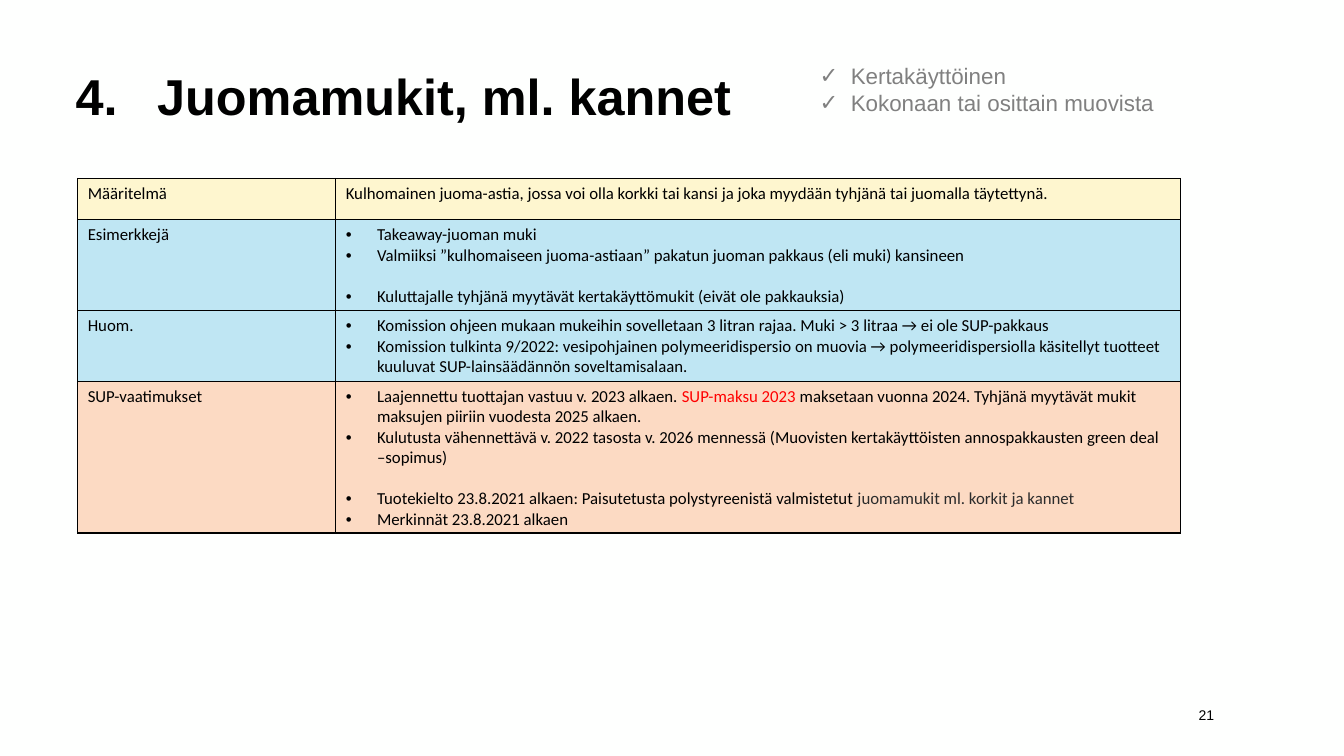
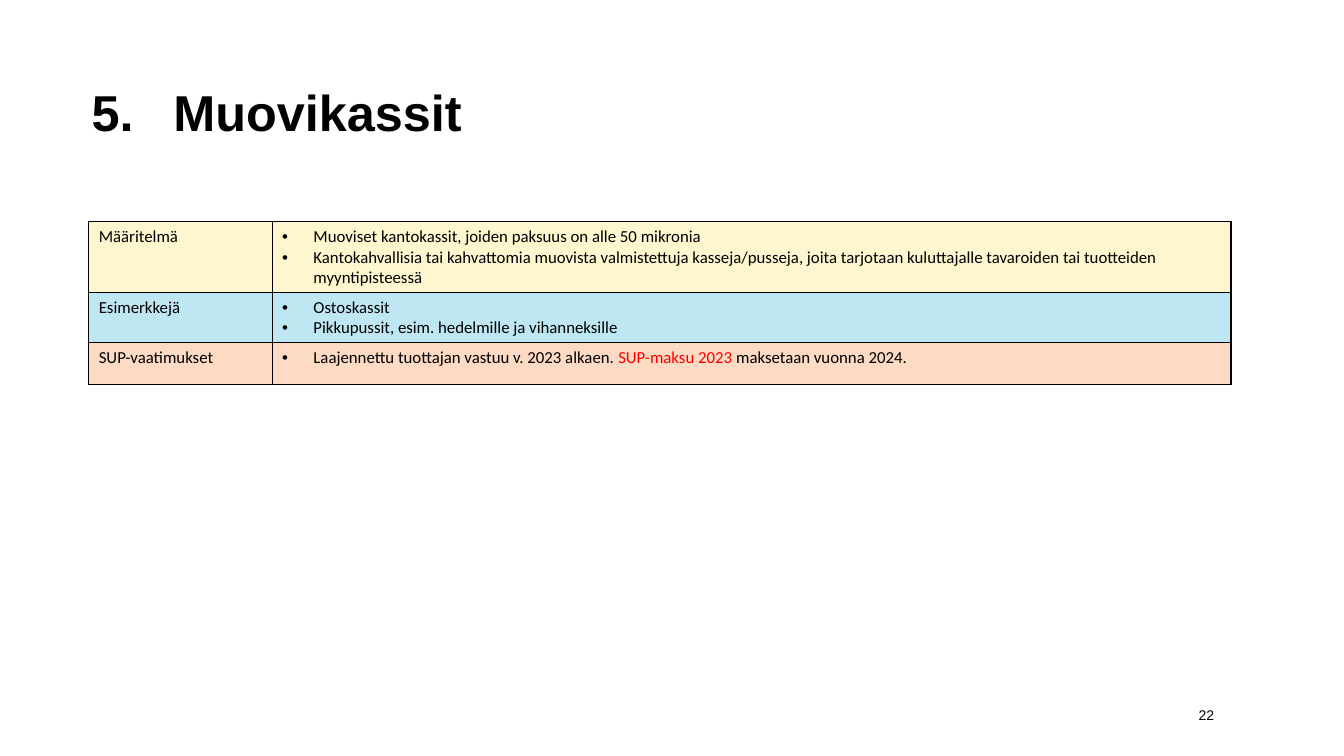
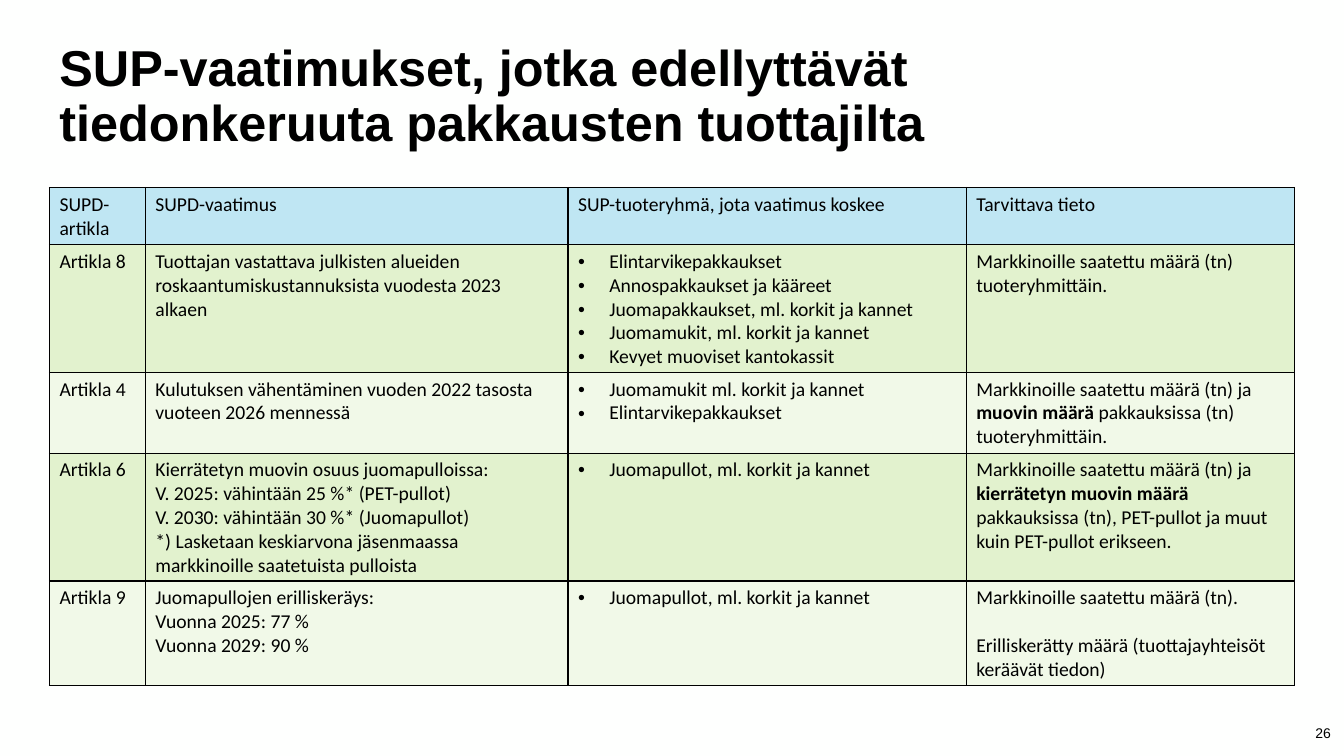
from dataclasses import dataclass

from lxml import etree
from pptx import Presentation
from pptx import util as u
from pptx.dml.color import RGBColor
from pptx.enum import text
from pptx.oxml import ns

WIDTH, HEIGHT = 13.33, 7.5
BACKGROUND, BLACK, GRAY, DARK, RED = "FEFFFE", "000000", "808080", "2C2C2C", "FF0000"
YELLOW, BLUE, ORANGE, GREEN, PALE_GREEN = "FEF6CF", "BFE6F3", "FCDAC3", "E2F2CE", "F1F9E8"
HEADING_FONT, TABLE_FONT = "Arial", "Calibri"
ROW_HEIGHT = 5.47
LINE_HEIGHT = 1.22
BULLET_INDENT, NUMBER_INDENT = 0.31, 0.81


@dataclass
class Piece:
    """Words within a paragraph that have their own colour or weight."""
    words: str
    color: str = BLACK
    bold: bool = False


@dataclass
class Item:
    """One paragraph; a gap leaves one empty line above it."""
    pieces: tuple
    bullet: str = ""
    gap: bool = False


def plain(*pieces, gap=False):
    return Item(pieces, gap=gap)


def bullet(*pieces, gap=False):
    return Item(pieces, "•", gap)


def bullets(*lines):
    return [bullet(line) for line in lines]


def across(percent):
    return u.Inches(WIDTH * percent / 100)


def down(percent):
    return u.Inches(HEIGHT * percent / 100)


def rgb(color):
    return RGBColor.from_string(color)


def add_xml(parent, tag, **attributes):
    return etree.SubElement(parent, ns.qn(tag), attributes)


def set_marker(paragraph, indent, tag, **attributes):
    """Hang the paragraph behind a bullet or an automatic number."""
    properties = paragraph._p.get_or_add_pPr()
    properties.set("marL", str(u.Inches(indent)))
    properties.set("indent", str(-u.Inches(indent)))
    add_xml(properties, "a:buFont", typeface=HEADING_FONT)
    add_xml(properties, tag, **attributes)


def format_run(run, font, size, color=BLACK, bold=False):
    run.font.name = font
    run.font.size = u.Pt(size)
    run.font.color.rgb = rgb(color)
    run.font.bold = bold


def fill_text(frame, items, font, size, color=BLACK):
    for index, item in enumerate(items):
        paragraph = frame.add_paragraph() if index else frame.paragraphs[0]
        if item.bullet:
            set_marker(paragraph, BULLET_INDENT, "a:buChar", char=item.bullet)
        if item.gap:
            paragraph.space_before = u.Pt(round(size * LINE_HEIGHT, 1))
        for piece in item.pieces:
            if isinstance(piece, str):
                piece = Piece(piece, color)
            run = paragraph.add_run()
            run.text = piece.words
            format_run(run, font, size, piece.color, piece.bold)


def add_text_box(slide, left, top, width, height, anchor=text.MSO_ANCHOR.MIDDLE):
    shape = slide.shapes.add_textbox(across(left), down(top), across(width), down(height))
    frame = shape.text_frame
    frame.word_wrap = True
    frame.vertical_anchor = anchor
    return frame


def add_title(slide, left, top, words, number=None):
    frame = add_text_box(slide, left, top, 85, 16.27)
    frame.text = words
    paragraph = frame.paragraphs[0]
    if number:
        set_marker(paragraph, NUMBER_INDENT, "a:buAutoNum",
                   type="arabicPeriod", startAt=str(number))
    paragraph.line_spacing = 0.9
    format_run(paragraph.runs[0], HEADING_FONT, 36, bold=True)


def add_page_number(slide, number, left=68.57, top=91.87):
    frame = add_text_box(slide, left, top, 22.5, 5.33)
    frame.text = str(number)
    paragraph = frame.paragraphs[0]
    paragraph.alignment = text.PP_ALIGN.RIGHT
    format_run(paragraph.runs[0], HEADING_FONT, 10)


def add_borders(cell):
    properties = cell._tc.get_or_add_tcPr()
    for side in ("a:lnL", "a:lnR", "a:lnT", "a:lnB"):
        line = add_xml(properties, side, w=str(u.Pt(1)))
        add_xml(add_xml(line, "a:solidFill"), "a:srgbClr", val=BLACK)


def add_table(slide, left, top, column_widths, rows, size):
    """Each row is a fill colour followed by its cells."""
    shape = slide.shapes.add_table(
        len(rows), len(column_widths), across(left), down(top),
        across(sum(column_widths)), down(ROW_HEIGHT * len(rows)))
    table = shape.table
    table.first_row = table.horz_banding = False
    for column, width in zip(table.columns, column_widths):
        column.width = across(width)
    for row, (color, *contents) in zip(table.rows, rows):
        row.height = down(ROW_HEIGHT)
        for cell, content in zip(row.cells, contents):
            add_borders(cell)
            cell.fill.solid()
            cell.fill.fore_color.rgb = rgb(color)
            items = [plain(content)] if isinstance(content, str) else content
            fill_text(cell.text_frame, items, TABLE_FONT, size)


def producer_fee(ending):
    return bullet("Laajennettu tuottajan vastuu v. 2023 alkaen. ",
                  Piece("SUP-maksu 2023 ", RED), ending)


def build_cups(slide):
    add_title(slide, 4.88, 4.93, "Juomamukit, ml. kannet", number=4)
    add_table(slide, 5.78, 23.6, (19.2, 62.87), [
        (YELLOW, "Määritelmä",
         "Kulhomainen juoma-astia, jossa voi olla korkki tai kansi ja joka myydään "
         "tyhjänä tai juomalla täytettynä."),
        (BLUE, "Esimerkkejä", [
            bullet("Takeaway-juoman muki"),
            bullet("Valmiiksi ”kulhomaiseen juoma-astiaan” pakatun juoman pakkaus "
                   "(eli muki) kansineen"),
            bullet("Kuluttajalle tyhjänä myytävät kertakäyttömukit "
                   "(eivät ole pakkauksia)", gap=True)]),
        (BLUE, "Huom.", bullets(
            "Komission ohjeen mukaan mukeihin sovelletaan 3 litran rajaa. "
            "Muki > 3 litraa → ei ole SUP-pakkaus",
            "Komission tulkinta 9/2022: vesipohjainen polymeeridispersio on muovia → "
            "polymeeridispersiolla käsitellyt tuotteet kuuluvat SUP-lainsäädännön "
            "soveltamisalaan.")),
        (ORANGE, "SUP-vaatimukset", [
            producer_fee("maksetaan vuonna 2024. Tyhjänä myytävät mukit maksujen "
                         "piiriin vuodesta 2025 alkaen."),
            bullet("Kulutusta vähennettävä v. 2022 tasosta v. 2026 mennessä (Muovisten "
                   "kertakäyttöisten annospakkausten green deal –sopimus)"),
            bullet("Tuotekielto 23.8.2021 alkaen: Paisutetusta polystyreenistä "
                   "valmistetut ", Piece("juomamukit ml. korkit ja kannet", DARK),
                   gap=True),
            bullet("Merkinnät 23.8.2021 alkaen")]),
    ], size=12)
    criteria = add_text_box(slide, 60.24, 7.6, 30, 12.53, text.MSO_ANCHOR.TOP)
    fill_text(criteria, [Item((words,), "✓") for words in
                         ("Kertakäyttöinen", "Kokonaan tai osittain muovista")],
              HEADING_FONT, 16, GRAY)
    add_page_number(slide, 21)


def build_bags(slide):
    add_title(slide, 6.08, 7.07, "Muovikassit", number=5)
    add_table(slide, 6.6, 29.33, (13.65, 71.35), [
        (YELLOW, "Määritelmä", bullets(
            "Muoviset kantokassit, joiden paksuus on alle 50 mikronia",
            "Kantokahvallisia tai kahvattomia muovista valmistettuja kasseja/pusseja, "
            "joita tarjotaan kuluttajalle tavaroiden tai tuotteiden myyntipisteessä")),
        (BLUE, "Esimerkkejä", bullets(
            "Ostoskassit", "Pikkupussit, esim. hedelmille ja vihanneksille")),
        (ORANGE, "SUP-vaatimukset", [producer_fee("maksetaan vuonna 2024.")]),
    ], size=12)
    add_page_number(slide, 22)


def build_requirements(slide):
    amount = "Markkinoille saatettu määrä (tn)"
    bottles = bullets("Juomapullot, ml. korkit ja kannet")
    add_title(slide, 3.68, 4.8,
              "SUP-vaatimukset, jotka edellyttävät tiedonkeruuta pakkausten tuottajilta")
    add_table(slide, 3.68, 24.8, (7.13, 31.45, 29.63, 24.46), [
        (BLUE, "SUPD-artikla", "SUPD-vaatimus", "SUP-tuoteryhmä, jota vaatimus koskee",
         "Tarvittava tieto"),
        (GREEN, "Artikla 8",
         "Tuottajan vastattava julkisten alueiden roskaantumiskustannuksista "
         "vuodesta 2023 alkaen",
         bullets("Elintarvikepakkaukset", "Annospakkaukset ja kääreet",
                 "Juomapakkaukset, ml. korkit ja kannet",
                 "Juomamukit, ml. korkit ja kannet", "Kevyet muoviset kantokassit"),
         f"{amount} tuoteryhmittäin."),
        (PALE_GREEN, "Artikla 4",
         "Kulutuksen vähentäminen vuoden 2022 tasosta vuoteen 2026 mennessä",
         bullets("Juomamukit ml. korkit ja kannet", "Elintarvikepakkaukset"),
         [plain(f"{amount} ja ", Piece("muovin määrä ", bold=True),
                "pakkauksissa (tn) tuoteryhmittäin.")]),
        (GREEN, "Artikla 6",
         [plain("Kierrätetyn muovin osuus juomapulloissa:"),
          plain("V. 2025: vähintään 25 %* (PET-pullot)"),
          plain("V. 2030: vähintään 30 %* (Juomapullot)"),
          plain("*) Lasketaan keskiarvona jäsenmaassa markkinoille saatetuista "
                "pulloista")],
         bottles,
         [plain(f"{amount} ja ", Piece("kierrätetyn muovin määrä ", bold=True),
                "pakkauksissa (tn), PET-pullot ja muut kuin PET-pullot erikseen.")]),
        (PALE_GREEN, "Artikla 9",
         [plain("Juomapullojen erilliskeräys:"), plain("Vuonna 2025: 77 %"),
          plain("Vuonna 2029: 90 %")],
         bottles,
         [plain(f"{amount}."),
          plain("Erilliskerätty määrä (tuottajayhteisöt keräävät tiedon)", gap=True)]),
    ], size=14)
    add_page_number(slide, 26, left=77.27, top=94.27)


def main():
    presentation = Presentation()
    presentation.slide_width = u.Inches(WIDTH)
    presentation.slide_height = u.Inches(HEIGHT)
    background = presentation.slide_master.background.fill
    background.solid()
    background.fore_color.rgb = rgb(BACKGROUND)
    for build in (build_cups, build_bags, build_requirements):
        build(presentation.slides.add_slide(presentation.slide_layouts[6]))
    presentation.save("out.pptx")


if __name__ == "__main__":
    main()
